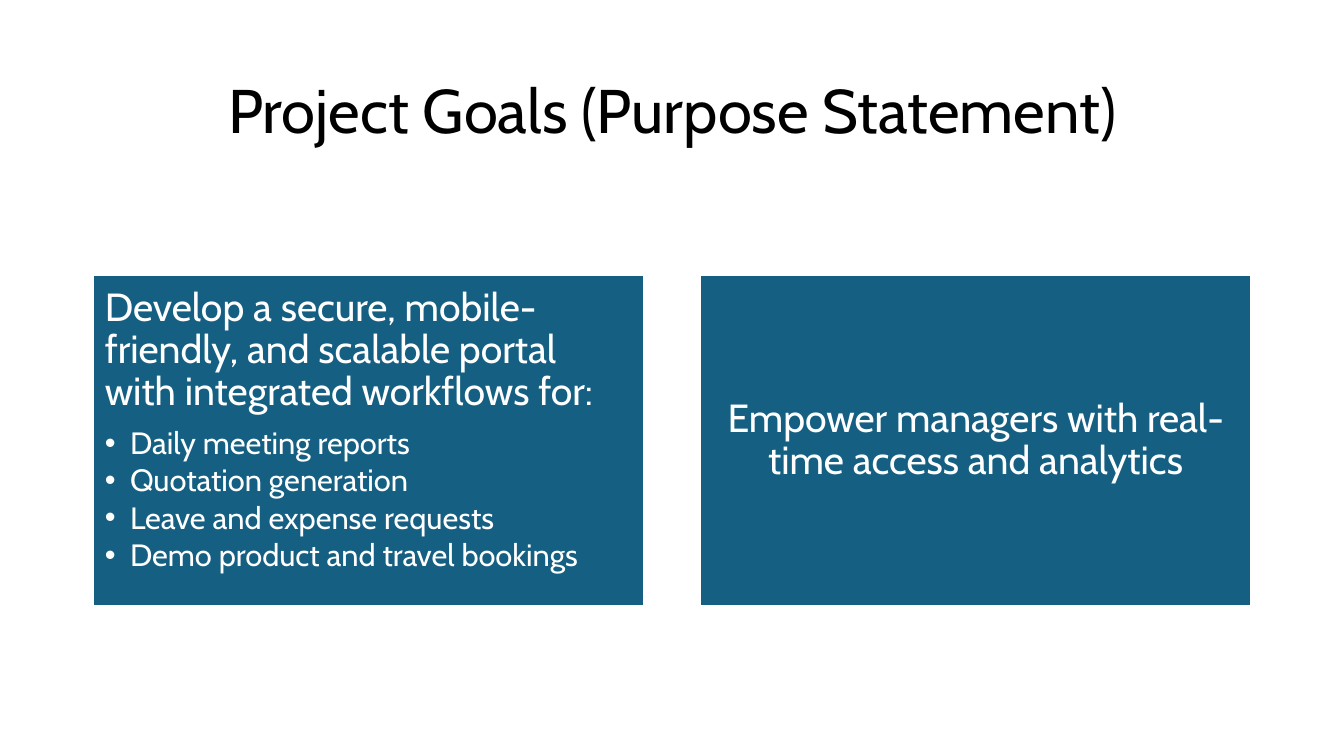
from pptx import Presentation
from pptx.dml.color import RGBColor
from pptx.enum.shapes import MSO_SHAPE as Shape
from pptx.enum.text import MSO_ANCHOR as Anchor, PP_ALIGN as Align
from pptx.oxml.ns import qn
from pptx.util import Inches, Pt
from lxml import etree


def color(value):
    return RGBColor.from_string(value)


class GoalsPage:
    """Holds the style and the slide being built."""
    font = "Cabin"
    panel_fill = "156082"
    white = "FFFFFF"
    black = "000000"

    def __init__(self, deck):
        self.page = deck.slides.add_slide(deck.slide_layouts[5])

    def format(self, para, size, ink, align=Align.LEFT, after=0):
        para.alignment = align
        para.line_spacing = 0.9
        para.space_before = Pt(0)
        para.space_after = Pt(after)
        for span in para.runs:
            span.font.name = self.font
            span.font.size = Pt(size)
            span.font.color.rgb = color(ink)

    def bullet(self, para):
        para.level = 1
        properties = para._p.get_or_add_pPr()
        properties.set("marL", str(Inches(0.25)))
        properties.set("indent", str(-Inches(0.25)))
        etree.SubElement(properties, qn("a:buFont")).set("typeface", "Arial")
        etree.SubElement(properties, qn("a:buChar")).set("char", "•")

    def title(self, text):
        box = self.page.shapes.title
        box.left, box.top = Inches(0.92), Inches(0.4)
        box.width, box.height = Inches(11.5), Inches(1.45)
        frame = box.text_frame
        frame.text = text
        frame.word_wrap = True
        frame.vertical_anchor = Anchor.MIDDLE
        self.format(frame.paragraphs[0], 44, self.black, Align.CENTER)

    def panel(self, left, goal, items=()):
        """Adds a filled panel; a goal without items is centred in it."""
        box = self.page.shapes.add_shape(
            Shape.RECTANGLE, Inches(left), Inches(2.73), Inches(5.47), Inches(3.28))
        box.shadow.inherit = False
        box.fill.solid()
        box.fill.fore_color.rgb = color(self.panel_fill)
        box.line.color.rgb = color(self.white)
        box.line.width = Pt(1.5)

        frame = box.text_frame
        frame.word_wrap = True
        frame.vertical_anchor = Anchor.TOP if items else Anchor.MIDDLE
        frame.margin_left = frame.margin_right = Inches(0.12)
        frame.margin_top = frame.margin_bottom = Inches(0.12)
        frame.text = goal
        align = Align.LEFT if items else Align.CENTER
        self.format(frame.paragraphs[0], 28, self.white, align, after=9.5 if items else 0)
        for item in items:
            para = frame.add_paragraph()
            para.text = item
            self.format(para, 22, self.white, after=3)
            self.bullet(para)


def main():
    deck = Presentation()
    deck.slide_width, deck.slide_height = Inches(13.33), Inches(7.5)
    goals = GoalsPage(deck)
    goals.title("Project Goals (Purpose Statement)")
    goals.panel(
        0.92,
        "Develop a secure, mobile-friendly, and scalable portal "
        "with integrated workflows for:",
        ["Daily meeting reports", "Quotation generation",
         "Leave and expense requests", "Demo product and travel bookings"])
    goals.panel(6.94, "Empower managers with real-time access and analytics")
    deck.save("out.pptx")


if __name__ == "__main__":
    main()
